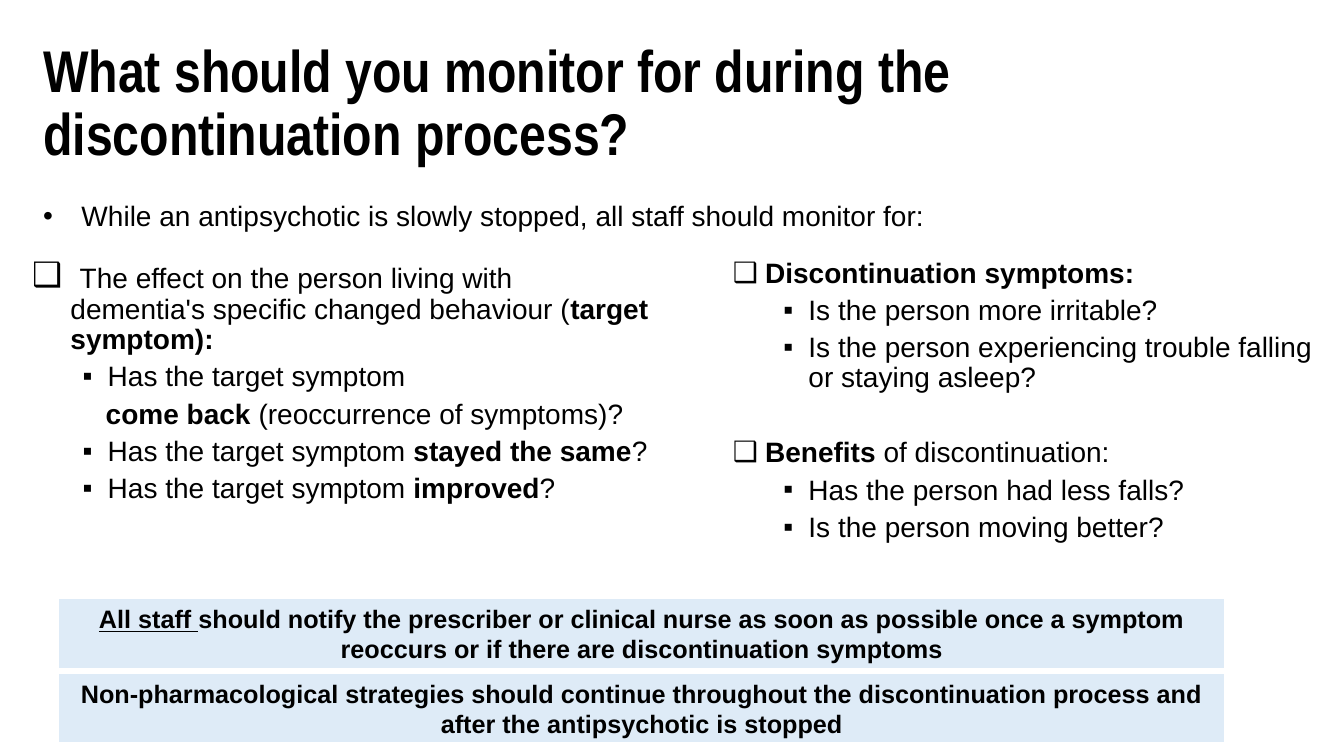
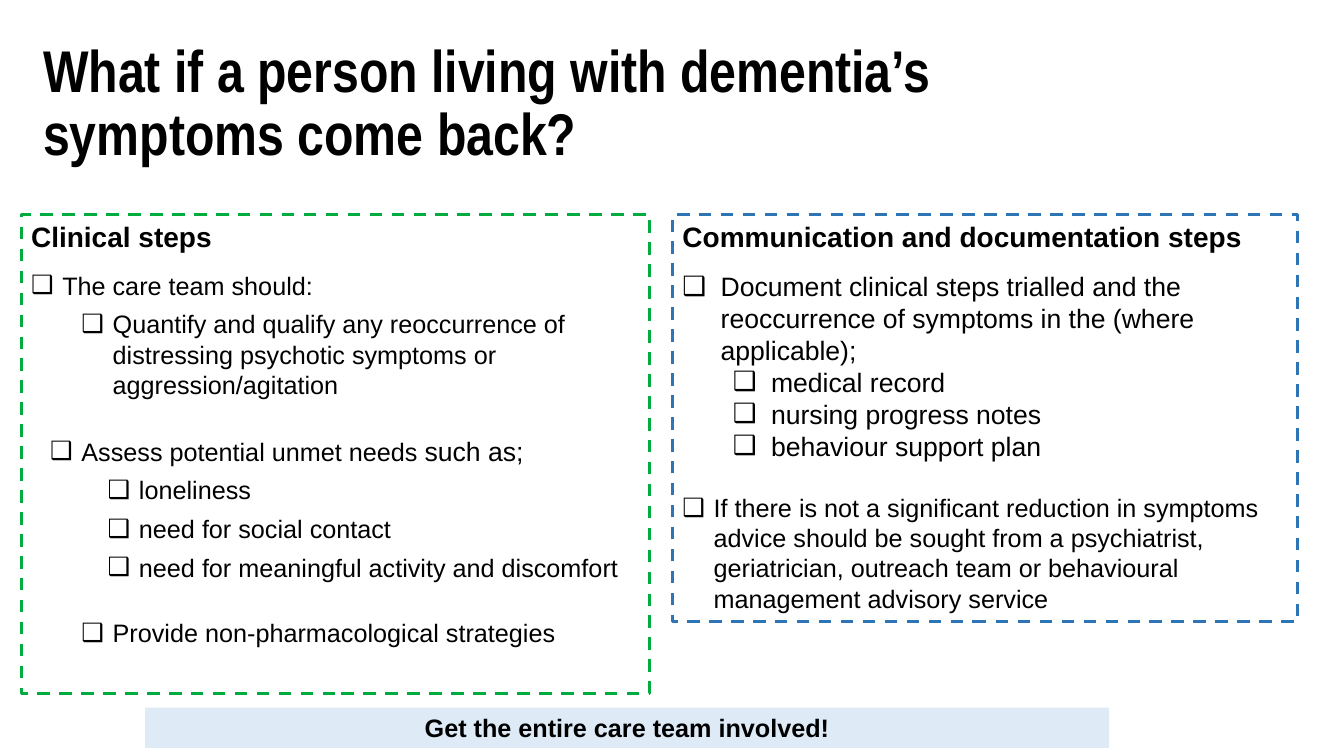
from lxml import etree
from pptx import Presentation
from pptx.dml.color import RGBColor
from pptx.enum.dml import MSO_LINE
from pptx.enum.shapes import MSO_SHAPE
from pptx.enum.text import MSO_ANCHOR, PP_ALIGN
from pptx.oxml.ns import qn
from pptx.util import Inches, Pt

RECTANGLE = MSO_SHAPE.RECTANGLE
DASH = MSO_LINE.DASH
TOP, MIDDLE = MSO_ANCHOR.TOP, MSO_ANCHOR.MIDDLE
LEFT, CENTER = PP_ALIGN.LEFT, PP_ALIGN.CENTER


class Theme:
    text = RGBColor(0x00, 0x00, 0x00)
    white = RGBColor(0xFF, 0xFF, 0xFF)
    band = RGBColor(0xDE, 0xEB, 0xF7)
    clinical = RGBColor(0x00, 0xAC, 0x3E)
    communication = RGBColor(0x2E, 0x75, 0xB6)
    body_font, title_font = "Arial", "Arial Narrow"
    title, heading, large, body = Pt(42), Pt(20), Pt(19), Pt(18)
    first_box = Pt(24)
    outline = Pt(2.25)


BOX, SQUARE, DOT = "❑", "▪", "•"
BOLD = {"bold": True}
TIGHT = {"line_spacing": 0.9}
TIGHT_SUB = {"line_spacing": 0.9, "space_before": Pt(5)}
SPACED = {"space_before": Pt(3), "space_after": Pt(3)}

# Paragraph styles: text indent, hanging width, bullet, size, paragraph format
STYLES = {
    "title": (0, 0, None, Theme.title, TIGHT),
    "intro": (0.38, 0.38, DOT, Theme.heading, TIGHT),
    "effect": (0.38, 0.38, BOX, Theme.heading, TIGHT),
    "question": (0.75, 0.25, SQUARE, Theme.heading, TIGHT_SUB),
    "question continued": (0.73, 0, None, Theme.heading, TIGHT_SUB),
    "group": (0.82, 0.32, BOX, Theme.heading, TIGHT),
    "group question": (1.25, 0.25, SQUARE, Theme.heading, TIGHT_SUB),
    "band": (0, 0, None, Theme.body, {"alignment": CENTER}),
    "heading": (0, 0, None, Theme.heading, {}),
    "step": (0.31, 0.31, BOX, Theme.body, {}),
    "substep": (0.81, 0.31, BOX, Theme.body, {}),
    "assess": (0.5, 0.31, BOX, Theme.body, SPACED),
    "need": (1.07, 0.31, BOX, Theme.body, SPACED),
    "document": (0.38, 0.38, BOX, Theme.large, {}),
    "record": (0.88, 0.38, BOX, Theme.large, {}),
}


def write(frame, paragraphs, anchor):
    """Fill a frame with (style, runs, optional space before) entries."""
    frame.word_wrap = True
    frame.vertical_anchor = anchor
    for index, (style, runs, *gap) in enumerate(paragraphs):
        paragraph = frame.paragraphs[0] if index == 0 else frame.add_paragraph()
        indent, hanging, bullet, size, layout = STYLES[style]
        properties = paragraph._p.get_or_add_pPr()
        properties.set("marL", str(Inches(indent)))
        properties.set("indent", str(-Inches(hanging)))
        if bullet:
            etree.SubElement(properties, qn("a:buFont")).set("typeface", Theme.body_font)
            etree.SubElement(properties, qn("a:buChar")).set("char", bullet)
        layout = {"alignment": LEFT, **layout}
        if gap:
            layout["space_before"] = Pt(gap[0])
        for name, value in layout.items():
            setattr(paragraph, name, value)
        for text, changes in runs:
            run = paragraph.add_run()
            run.text = text
            font_format = {"name": Theme.body_font, "size": size, "bold": False, **changes}
            for name, value in font_format.items():
                setattr(run.font, name, value)
            run.font.color.rgb = Theme.text


def add_panel(slide, place, paragraphs, fill=None, line=None, dash=None, anchor=TOP):
    """Add a rectangle with text, filled or outlined."""
    panel = slide.shapes.add_shape(RECTANGLE, *map(Inches, place))
    panel.shadow.inherit = False
    if fill is None:
        panel.fill.background()
    else:
        panel.fill.solid()
        panel.fill.fore_color.rgb = fill
    if line is None:
        panel.line.fill.background()
    else:
        panel.line.color.rgb = line
        panel.line.width = Theme.outline
        panel.line.dash_style = dash
    write(panel.text_frame, paragraphs, anchor)


deck = Presentation()
deck.slide_width, deck.slide_height = Inches(13.33), Inches(7.5)

# Slides with their titles
titles = [
    ("What should you monitor for during the discontinuation process?", 9.32),
    ("What if a person living with dementia’s symptoms come back?", 9.97),
]
slides = []
for title, width in titles:
    slide = deck.slides.add_slide(deck.slide_layouts[6])
    title_box = slide.shapes.add_textbox(
        Inches(0.33), Inches(0.36), Inches(width), Inches(0.81))
    write(title_box.text_frame,
          [("title", [(title, {"name": Theme.title_font, "bold": True})])], TOP)
    slides.append(slide)
monitoring, recurrence = slides

# Monitoring: introduction and two columns
intro = [("intro", [
    ("While an antipsychotic is slowly stopped, all staff should monitor for:", {})])]
target_symptom = [
    ("effect", [
        (" ", {"size": Theme.first_box}),
        ("The effect on the person living with dementia's specific changed behaviour (", {}),
        ("target symptom):", BOLD)]),
    ("question", [("Has the target symptom", {})]),
    ("question continued", [("come back ", BOLD), ("(reoccurrence of symptoms)?", {})]),
    ("question", [("Has the target symptom ", {}), ("stayed the same", BOLD), ("?", {})]),
    ("question", [("Has the target symptom ", {}), ("improved", BOLD), ("?", {})]),
]
other_signs = [
    ("group", [("Discontinuation symptoms:", BOLD)]),
    ("group question", [("Is the person more irritable?", {})]),
    ("group question", [
        ("Is the person experiencing trouble falling or staying asleep?", {})]),
    ("group", [("Benefits", BOLD), (" of discontinuation:", {})], 32),
    ("group question", [("Has the person had less falls?", {})]),
    ("group question", [("Is the person moving better?", {})]),
]
for place, paragraphs in [
    ((0.33, 1.96, 11.68, 0.4), intro),
    ((0.22, 2.52, 6.32, 3.81), target_symptom),
    ((6.67, 2.52, 6.45, 3.81), other_signs),
]:
    column = monitoring.shapes.add_textbox(*map(Inches, place))
    write(column.text_frame, paragraphs, TOP)

# Recurrence: clinical and communication steps
clinical_steps = [
    ("heading", [("Clinical steps", BOLD)]),
    ("step", [("The care team should:", {})], 12),
    ("substep", [("Quantify and qualify any reoccurrence of distressing psychotic "
                  "symptoms or aggression/agitation", {})], 6),
    ("assess", [("Assess potential unmet needs ", {}),
                ("such as;", {"size": Theme.large})], 25),
    *[("need", [(need, {})]) for need in (
        "loneliness", "need for social contact",
        "need for meaningful activity and discomfort")],
    ("substep", [("Provide non-pharmacological strategies", {})], 22),
]
communication_steps = [
    ("heading", [("Communication and documentation steps", BOLD)]),
    ("document", [("Document clinical steps trialled and the reoccurrence of "
                   "symptoms in the (where applicable);", {})], 12),
    *[("record", [(record, {})]) for record in (
        "medical record", "nursing progress notes", "behaviour support plan")],
    ("step", [("If there is not a significant reduction in symptoms advice should be "
               "sought from a psychiatrist, geriatrician, outreach team or behavioural "
               "management advisory service", {})], 22),
]
for place, paragraphs, color in [
    ((0.21, 2.13, 6.23, 4.75), clinical_steps, Theme.clinical),
    ((6.67, 2.13, 6.2, 4.04), communication_steps, Theme.communication),
]:
    add_panel(recurrence, place, paragraphs, line=color, dash=DASH)

# Key message bands
notify = [
    ("All staff ", {"bold": True, "underline": True}),
    ("should notify the prescriber or clinical nurse as soon as possible once a "
     "symptom reoccurs or if there are discontinuation symptoms", BOLD)]
strategies = [("Non-pharmacological strategies should continue throughout the "
               "discontinuation process and after the antipsychotic is stopped", BOLD)]
team = [("Get the entire care team involved!", BOLD)]
for slide, place, message, line in [
    (monitoring, (0.57, 5.93, 11.59, 0.71), notify, Theme.white),
    (monitoring, (0.57, 6.67, 11.59, 0.71), strategies, Theme.white),
    (recurrence, (1.44, 7.02, 9.56, 0.4), team, None),
]:
    add_panel(slide, place, [("band", message)], fill=Theme.band, line=line, anchor=MIDDLE)

deck.save("out.pptx")
